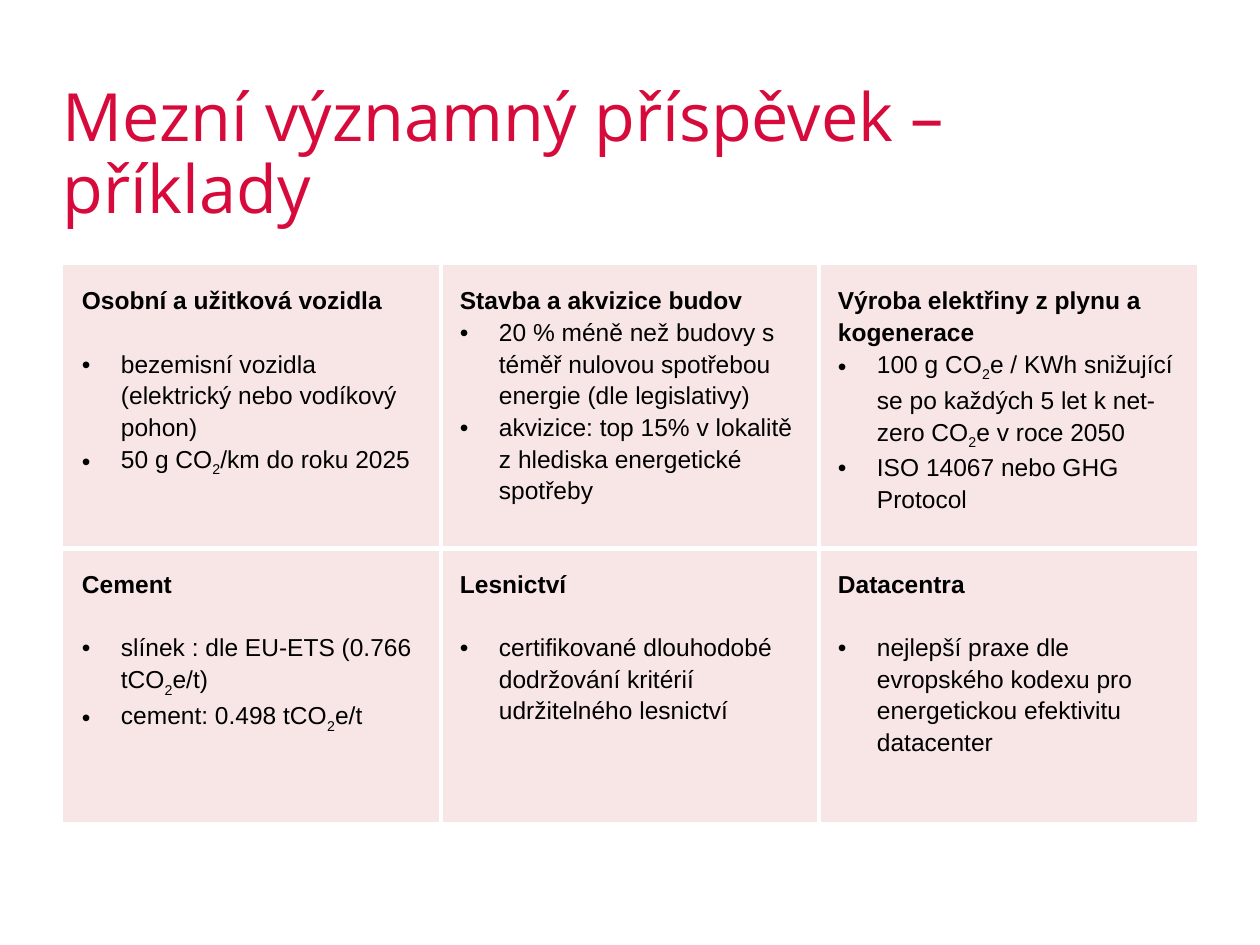
from lxml.etree import SubElement
from pptx import Presentation
from pptx.dml.color import RGBColor
from pptx.enum.text import MSO_AUTO_SIZE as AutoSize
from pptx.oxml.ns import qn
from pptx.util import Inches, Pt

TITLE = "Mezní významný příspěvek – příklady"
# Text between tildes is set as subscript.
SECTORS = [
    [
        ("Osobní a užitková vozidla", 18, [
            "bezemisní vozidla (elektrický nebo vodíkový pohon)",
            "50 g CO~2~/km do roku 2025"]),
        ("Stavba a akvizice budov", 0, [
            "20 % méně než budovy s téměř nulovou spotřebou energie (dle legislativy)",
            "akvizice: top 15% v lokalitě z hlediska energetické spotřeby"]),
        ("Výroba elektřiny z plynu a kogenerace", 0, [
            "100 g CO~2~e / KWh snižující se po každých 5 let k net-zero CO~2~e v roce 2050",
            "ISO 14067 nebo GHG Protocol"]),
    ],
    [
        ("Cement", 18, [
            "slínek : dle EU-ETS (0.766 tCO~2~e/t)",
            "cement: 0.498 tCO~2~e/t"]),
        ("Lesnictví", 18, [
            "certifikované dlouhodobé dodržování kritérií udržitelného lesnictví"]),
        ("Datacentra", 18, [
            "nejlepší praxe dle evropského kodexu pro energetickou efektivitu datacenter"]),
    ],
]
CRIMSON, PINK, WHITE, BLACK = "D70B3B", "F8E6E7", "FFFFFF", "000000"
MARGIN, COLUMN, ROW, INSET, INDENT = 0.5, 3, 2.17, 0.15, 0.31


def color(value):
    """Turn a hex string into a colour."""
    return RGBColor.from_string(value)


def write(paragraph, text, size=14, font="Arial", ink=BLACK, bold=False,
          spacing=1.15, after=0, bullet=False):
    """Fill a paragraph with formatted text, optionally bulleted."""
    paragraph.line_spacing = spacing
    paragraph.space_before = Pt(0)
    paragraph.space_after = Pt(after)
    if bullet:
        properties = paragraph._p.get_or_add_pPr()
        properties.set("marL", str(Inches(INDENT)))
        properties.set("indent", str(-Inches(INDENT)))
        SubElement(properties, qn("a:buFont"), typeface="Arial")
        SubElement(properties, qn("a:buChar"), char="•")
    for index, part in enumerate(text.split("~")):
        run = paragraph.add_run()
        run.text = part
        run.font.size, run.font.name, run.font.bold = Pt(size), font, bold
        run.font.color.rgb = color(ink)
        if index % 2:
            run._r.get_or_add_rPr().set("baseline", "-25000")


def set_borders(cell, inner_sides):
    """Draw white lines on the inner sides of a cell and none on the outer."""
    properties = cell._tc.get_or_add_tcPr()
    for position, side in enumerate("LRTB"):
        line = properties.makeelement(qn(f"a:ln{side}"), {"w": str(Pt(3))})
        if side in inner_sides:
            fill = SubElement(line, qn("a:solidFill"))
            SubElement(fill, qn("a:srgbClr"), val=WHITE)
        else:
            SubElement(line, qn("a:noFill"))
        properties.insert(position, line)


def fill_cell(cell, heading, gap, criteria):
    """Write one sector's heading and criteria into a cell."""
    cell.fill.solid()
    cell.fill.fore_color.rgb = color(PINK)
    cell.margin_left = cell.margin_right = Inches(INSET)
    cell.margin_top = cell.margin_bottom = Inches(INSET)
    frame = cell.text_frame
    write(frame.paragraphs[0], heading, bold=True, after=gap)
    for criterion in criteria:
        write(frame.add_paragraph(), criterion, bullet=True)


def main():
    """Build the slide and save it."""
    deck = Presentation()
    deck.slide_width, deck.slide_height = Inches(10), Inches(7.5)
    slide = deck.slides.add_slide(deck.slide_layouts[6])

    title = slide.shapes.add_textbox(
        Inches(MARGIN), Inches(0.67), Inches(9), Inches(0.58)).text_frame
    title.word_wrap = True
    title.auto_size = AutoSize.SHAPE_TO_FIT_TEXT
    title.margin_left = title.margin_right = 0
    title.margin_top = title.margin_bottom = 0
    write(title.paragraphs[0], TITLE, size=38, font="Open Sans",
          ink=CRIMSON, spacing=0.9)

    rows, columns = len(SECTORS), len(SECTORS[0])
    grid = slide.shapes.add_table(
        rows, columns, Inches(MARGIN), Inches(2.1),
        Inches(COLUMN * columns), Inches(ROW * rows)).table
    grid.first_row = grid.horz_banding = False
    for r, sectors in enumerate(SECTORS):
        for c, sector in enumerate(sectors):
            cell = grid.cell(r, c)
            fill_cell(cell, *sector)
            inner = {"L": c > 0, "R": c < columns - 1,
                     "T": r > 0, "B": r < rows - 1}
            set_borders(cell, [side for side in inner if inner[side]])

    deck.save("out.pptx")


if __name__ == "__main__":
    main()
